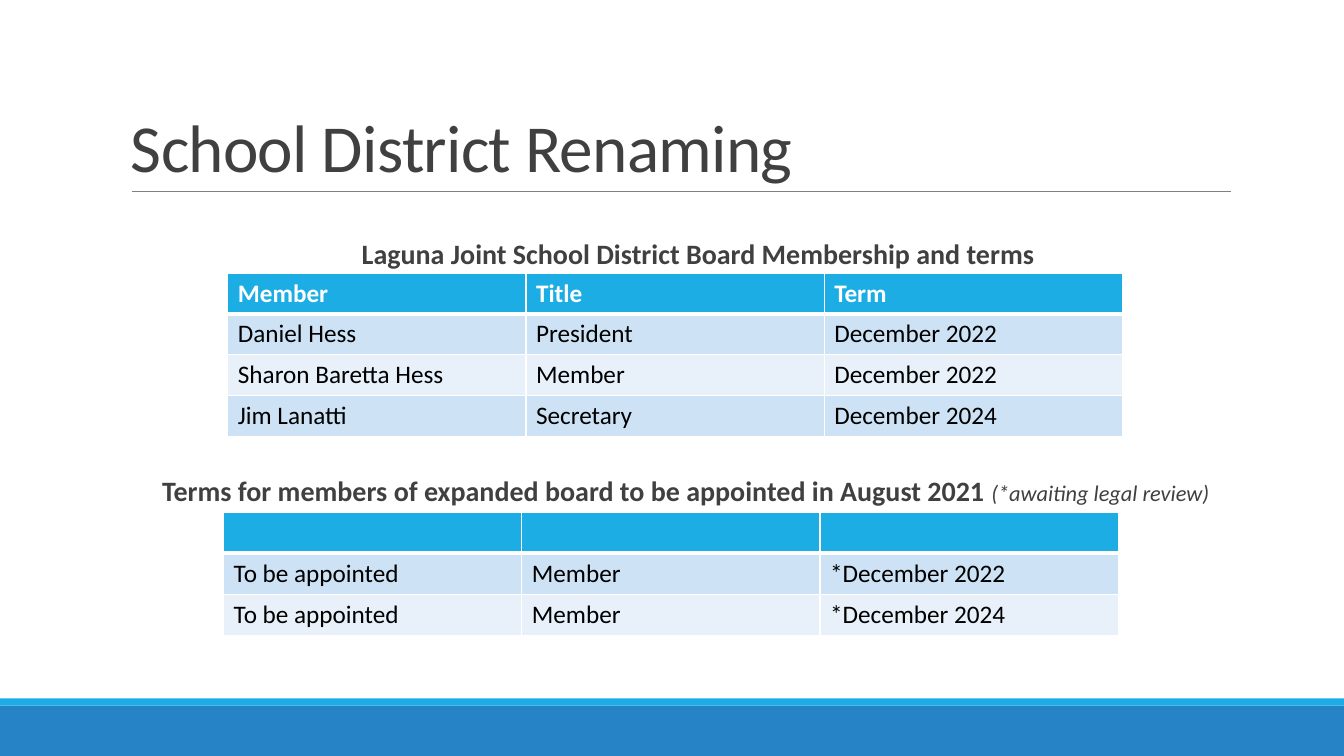
from lxml.etree import SubElement
from pptx import Presentation
from pptx.dml.color import RGBColor
from pptx.enum.shapes import MSO_CONNECTOR, MSO_SHAPE
from pptx.enum.text import MSO_ANCHOR, PP_ALIGN
from pptx.oxml import parse_xml
from pptx.oxml.ns import nsdecls, qn
from pptx.util import Pt

PX = 9525


def px(*lengths):
    return [n * PX for n in lengths]


def style(font, size, color, bold=False, italic=False):
    font.name, font.size, font.bold, font.italic = "Calibri", Pt(size), bold, italic
    font.color.rgb = RGBColor.from_string(color)


prs = Presentation()
prs.slide_width, prs.slide_height = px(1280, 720)
s = prs.slides.add_slide(prs.slide_layouts[5])

for top, height, color in [(672, 48, "2683C6"), (665, 7, "1CADE4")]:
    sp = s.shapes.add_shape(MSO_SHAPE.RECTANGLE, *px(0, top, 1280, height))
    sp.shadow.inherit = False
    sp.fill.solid()
    sp.fill.fore_color.rgb = RGBColor.from_string(color)
    sp.line.fill.background()

rule = s.shapes.add_connector(MSO_CONNECTOR.STRAIGHT, *px(126, 182, 1172, 182))
rule.line.color.rgb = RGBColor.from_string("808080")
rule.line.width = Pt(0.5)
SubElement(rule._element.spPr, qn("a:effectLst"))

title = s.shapes.title
title.left, title.top, title.width, title.height = px(115, 30, 1056, 152)
tf = title.text_frame
tf.text = "School District Renaming"
tf.vertical_anchor = MSO_ANCHOR.BOTTOM
p = tf.paragraphs[0]
p.alignment = PP_ALIGN.LEFT
p.line_spacing = 0.85
r = p.runs[0]
style(r.font, 48, "404040")
r.font._element.set("spc", "-50")

headings = [
    (127, 224, [("Laguna Joint School District Board Membership and terms", 20, True)]),
    (115, 450, [("Terms for members of expanded board to be appointed in August 2021 ", 20, True),
                ("(*awaiting legal review)", 16, False)]),
]
for left, top, parts in headings:
    tf = s.shapes.add_textbox(*px(left, top, 1076, 34)).text_frame
    tf.word_wrap = True
    tf.margin_left = tf.margin_right = tf.margin_top = tf.margin_bottom = 0
    tf.vertical_anchor = MSO_ANCHOR.MIDDLE
    p = tf.paragraphs[0]
    p.alignment = PP_ALIGN.CENTER
    for text, size, bold in parts:
        r = p.add_run()
        r.text = text
        style(r.font, size, "404040", bold, not bold)

tables = [
    (217, 260, [("Member", "Title", "Term"),
                ("Daniel Hess", "President", "December 2022"),
                ("Sharon Baretta Hess", "Member", "December 2022"),
                ("Jim Lanatti", "Secretary", "December 2024")]),
    (213, 488, [("", "", ""),
                ("To be appointed", "Member", "*December 2022"),
                ("To be appointed", "Member", "*December 2024")]),
]
for left, top, rows in tables:
    table = s.shapes.add_table(len(rows), 3, *px(left, top, 3 * 284, len(rows) * 39)).table
    for i, row in enumerate(rows):
        header = i == 0
        fill = "1CADE4" if header else ("E8F1FA", "CDE3F5")[i % 2]
        for j, text in enumerate(row):
            cell = table.cell(i, j)
            cell.fill.solid()
            cell.fill.fore_color.rgb = RGBColor.from_string(fill)
            cell.text_frame.text = text
            p = cell.text_frame.paragraphs[0]
            style(p.font, 18, "FFFFFF" if header else "000000", header)
            for r in p.runs:
                style(r.font, 18, "FFFFFF" if header else "000000", header)
            tcPr = cell._tc.get_or_add_tcPr()
            for k, side in enumerate("LRTB"):
                thick = (header and side == "B") or (i == 1 and side == "T")
                tcPr.insert(k, parse_xml(
                    f'<a:ln{side} {nsdecls("a")} w="{Pt(3 if thick else 1)}"><a:solidFill>'
                    f'<a:srgbClr val="FFFFFF"/></a:solidFill></a:ln{side}>'))

prs.save("out.pptx")
